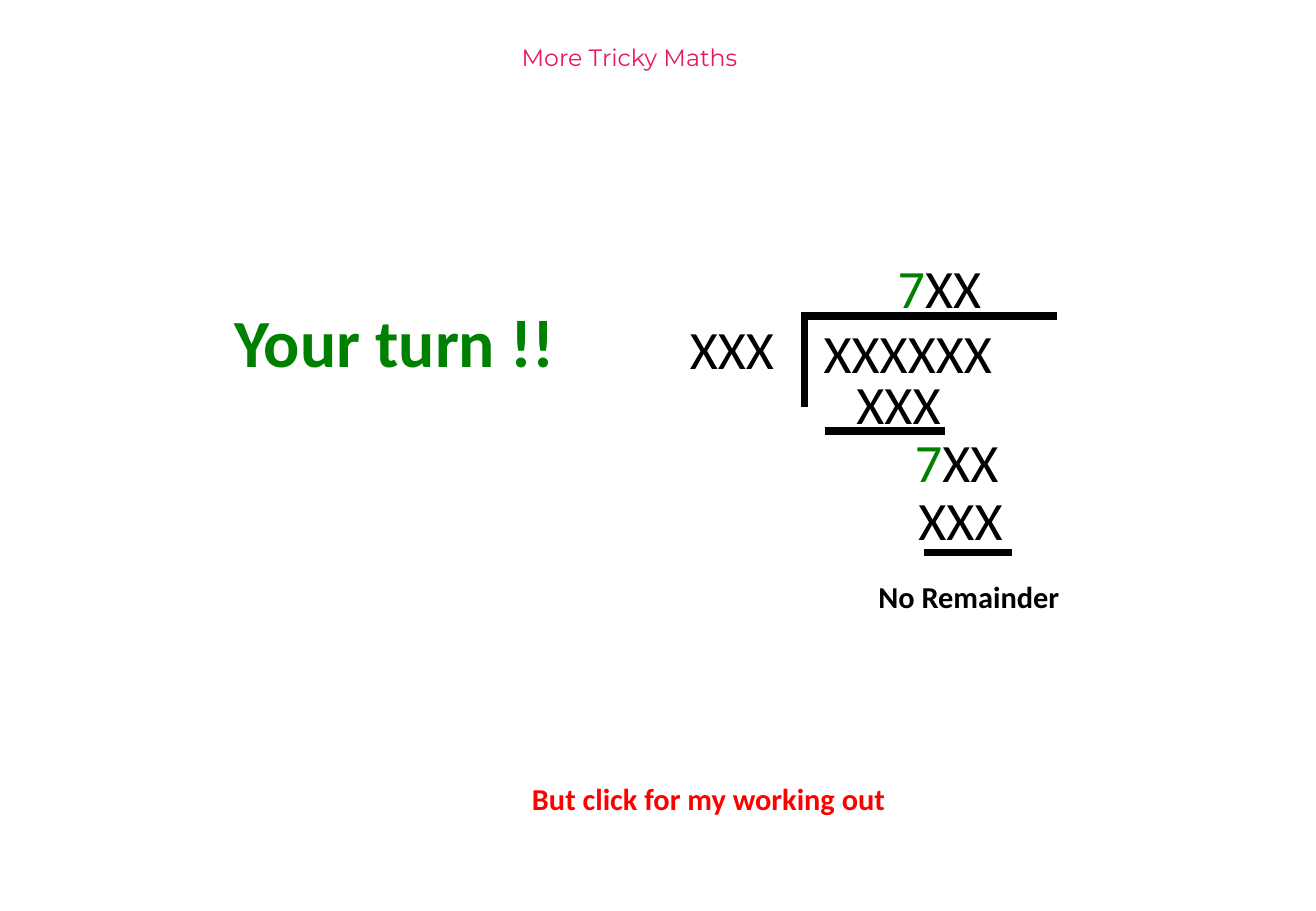
from dataclasses import dataclass

from pptx import Presentation
from pptx.dml.color import RGBColor
from pptx.enum.shapes import MSO_CONNECTOR
from pptx.enum.text import MSO_ANCHOR, MSO_AUTO_SIZE, PP_ALIGN
from pptx.oxml.ns import qn
from pptx.shapes.shapetree import GroupShapes, SlideShapes
from pptx.slide import Slide
from pptx.util import Inches, Pt
from lxml.etree import SubElement

BLACK = RGBColor(0x00, 0x00, 0x00)
GREEN = RGBColor(0x00, 0x80, 0x00)
RED = RGBColor(0xFF, 0x00, 0x00)
PINK = RGBColor(0xE8, 0x17, 0x66)

SLIDE_WIDTH, SLIDE_HEIGHT = Inches(10.83), Inches(7.5)
BAR_WEIGHT = Pt(4.5)


@dataclass(frozen=True)
class Style:
    size: int
    height: float  # percent of the slide height
    bold: bool


@dataclass(frozen=True)
class Label:
    left: float  # all lengths in percent of the slide
    top: float
    width: float
    style: Style
    spans: tuple[tuple[str, RGBColor], ...]


@dataclass(frozen=True)
class Bar:
    left: float
    top: float
    right: float
    bottom: float


CALL = Style(40, 10.27, True)
DIGITS = Style(32, 8.53, False)
NOTE = Style(18, 5.33, True)

THREE_DIGITS = (("XXX", BLACK),)
SEVEN_FIRST = (("7", GREEN), ("XX", BLACK))

PROMPTS = (
    Label(16.9, 32.27, 26.5, CALL, (("Your turn !!", GREEN),)),
    Label(39.52, 84.93, 28.9, NOTE, (("But click for my working out", RED),)),
)
DIVISION = (
    Label(51.52, 34, 8.31, DIGITS, THREE_DIGITS),
    Label(61.68, 34.4, 14.77, DIGITS, (("XXXXXX", BLACK),)),
    Label(67.31, 27.33, 8.31, DIGITS, SEVEN_FIRST),
    Label(64.17, 40, 9.23, DIGITS, THREE_DIGITS),
    Label(68.61, 46.4, 9.23, DIGITS, SEVEN_FIRST),
    Label(68.88, 52.8, 9.23, DIGITS, THREE_DIGITS),
    Label(65.84, 62.8, 15.7, NOTE, (("No Remainder", BLACK),)),
)
BARS = (
    Bar(61.13, 34.67, 61.13, 44.67),
    Bar(60.85, 34.67, 80.33, 34.67),
    Bar(62.7, 47.33, 71.84, 47.33),
    Bar(70.18, 60.67, 76.92, 60.67),
)


def across(percent: float) -> int:
    return round(SLIDE_WIDTH * percent / 100)


def down(percent: float) -> int:
    return round(SLIDE_HEIGHT * percent / 100)


def draw_title(page: Slide, text: str) -> None:
    title = page.shapes.title
    title.left, title.top = across(36.57), down(4)
    title.width, title.height = across(22.53), down(7.73)
    frame = title.text_frame
    frame.text = text
    frame.word_wrap = False
    frame.auto_size = MSO_AUTO_SIZE.NONE
    frame.vertical_anchor = MSO_ANCHOR.TOP
    para = frame.paragraphs[0]
    para.alignment = PP_ALIGN.CENTER
    para.font.name, para.font.size = "Montserrat", Pt(14)
    para.font.color.rgb = PINK


def draw_label(shapes: SlideShapes | GroupShapes, label: Label) -> None:
    box = shapes.add_textbox(across(label.left), down(label.top),
                             across(label.width), down(label.style.height))
    frame = box.text_frame
    frame.word_wrap = False
    frame.auto_size = MSO_AUTO_SIZE.SHAPE_TO_FIT_TEXT
    para = frame.paragraphs[0]
    para.font.name, para.font.size = "Calibri", Pt(label.style.size)
    para.font.bold = label.style.bold
    for text, color in label.spans:
        span = para.add_run()
        span.text = text
        span.font.color.rgb = color


def draw_bar(shapes: GroupShapes, bar: Bar) -> None:
    line = shapes.add_connector(MSO_CONNECTOR.STRAIGHT,
                                across(bar.left), down(bar.top),
                                across(bar.right), down(bar.bottom))
    line.line.color.rgb = BLACK
    line.line.width = BAR_WEIGHT
    SubElement(line._element.spPr, qn("a:effectLst"))


def main() -> None:
    deck = Presentation()
    deck.slide_width, deck.slide_height = SLIDE_WIDTH, SLIDE_HEIGHT
    page = deck.slides.add_slide(deck.slide_layouts.get_by_name("Title Only"))

    # Heading and prompts
    draw_title(page, "More Tricky Maths")
    for label in PROMPTS:
        draw_label(page.shapes, label)

    # Long division
    division = page.shapes.add_group_shape().shapes
    for label in DIVISION:
        draw_label(division, label)
    for bar in BARS:
        draw_bar(division, bar)

    deck.save("out.pptx")


if __name__ == "__main__":
    main()
